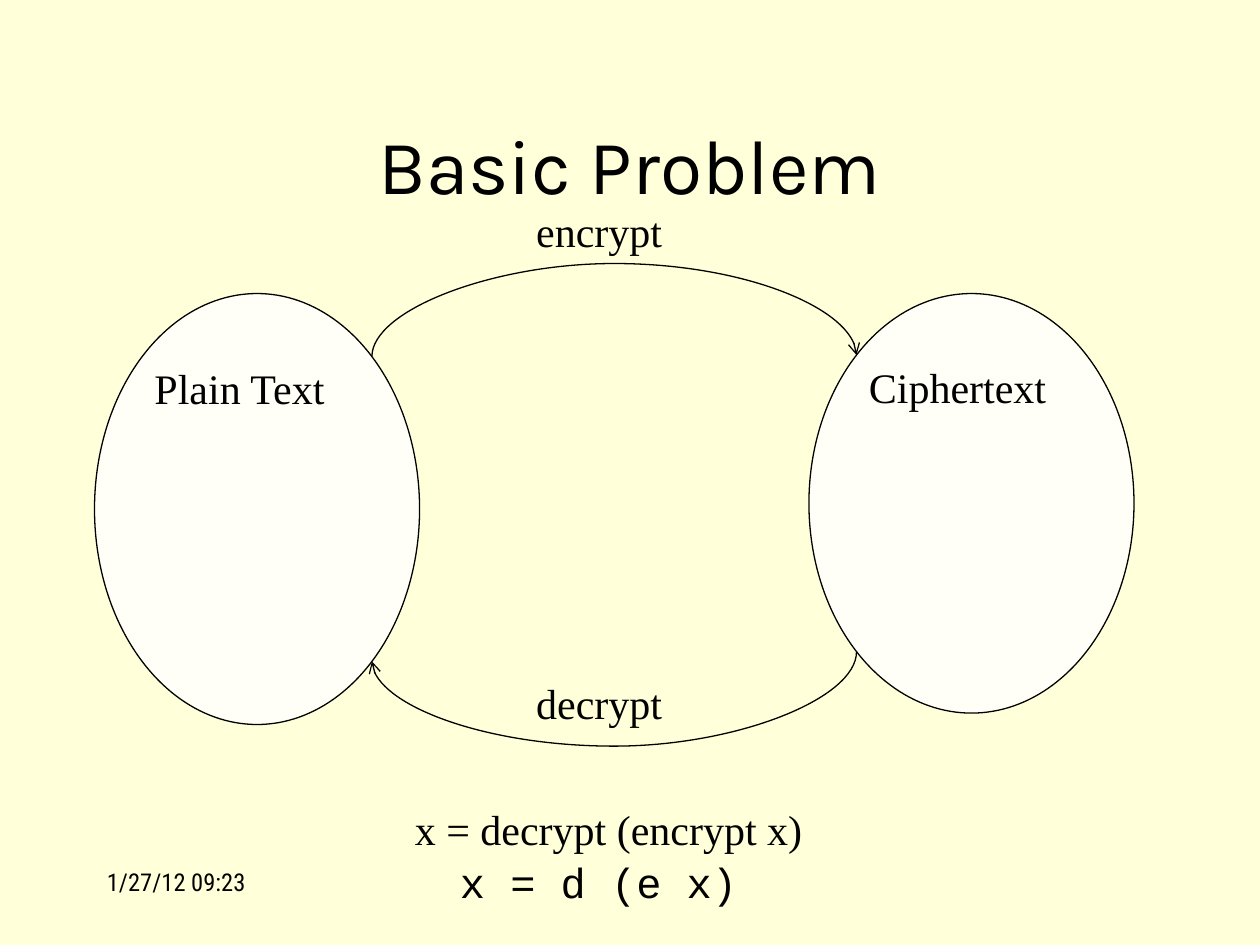
from lxml.etree import SubElement
from pptx import Presentation
from pptx.dml.color import RGBColor
from pptx.enum.shapes import MSO_CONNECTOR, MSO_SHAPE
from pptx.enum.text import MSO_ANCHOR, PP_ALIGN
from pptx.oxml.ns import qn
from pptx.util import Inches, Pt

COLORS = {"background": "FFFFD9", "oval": "FFFFF7", "ink": "000000"}
SERIF = "Times New Roman"
# Connection sites of an ellipse, counted anticlockwise from the top
TOP_LEFT, BOTTOM_LEFT, BOTTOM_RIGHT, TOP_RIGHT = 1, 3, 5, 7


def color(name):
    return RGBColor.from_string(COLORS[name])


def write(frame, text, size, font, align=PP_ALIGN.LEFT):
    frame.word_wrap = True
    line = frame.paragraphs[0]
    line.text = text
    line.alignment = align
    line.font.size = Pt(size)
    line.font.name = font
    line.font.color.rgb = color("ink")


def add_label(slide, box, text, size=24, font=SERIF, align=PP_ALIGN.CENTER,
              anchor=MSO_ANCHOR.TOP):
    frame = slide.shapes.add_textbox(*map(Inches, box)).text_frame
    frame.vertical_anchor = anchor
    write(frame, text, size, font, align)


def add_oval(slide, box, text):
    oval = slide.shapes.add_shape(MSO_SHAPE.OVAL, *map(Inches, box))
    oval.shadow.inherit = False
    oval.fill.solid()
    oval.fill.fore_color.rgb = color("oval")
    oval.line.color.rgb = color("ink")
    oval.line.width = Pt(0.75)
    oval.text_frame.vertical_anchor = MSO_ANCHOR.TOP
    write(oval.text_frame, text, 24, SERIF)
    return oval


def site_point(oval, site):
    """Position of a diagonal connection site on an ellipse."""
    across = 1 if site in (TOP_RIGHT, BOTTOM_RIGHT) else -1
    down = 1 if site in (BOTTOM_LEFT, BOTTOM_RIGHT) else -1
    reach = 0.5 ** 0.5 / 2
    return (oval.left + oval.width * (0.5 + across * reach),
            oval.top + oval.height * (0.5 + down * reach))


def add_arc(slide, source, source_site, target, target_site, upward):
    """Curved arrow between two ovals, bulging 0.75 in above or below them."""
    x1, y1 = site_point(source, source_site)
    x2, y2 = site_point(target, target_site)
    # The curve is a standing connector turned by 90 degrees
    width, height = abs(y2 - y1), abs(x2 - x1)
    left, top = (x1 + x2 - width) / 2, (y1 + y2 - height) / 2
    arc = slide.shapes.add_connector(
        MSO_CONNECTOR.CURVE,
        *map(int, (left, top, left + width, top + height)))
    arc.line.color.rgb = color("ink")
    arc.line.width = Pt(0.75)

    properties = arc._element.spPr
    xfrm = properties.find(qn("a:xfrm"))
    xfrm.set("rot", str(90 * 60000))
    if upward:
        xfrm.set("flipH", "1")
        xfrm.set("flipV", "1")
    bulge = round(Inches(0.75) / width * 100000)
    guides = properties.find(qn("a:prstGeom")).find(qn("a:avLst"))
    SubElement(guides, qn("a:gd"), name="adj1", fmla=f"val {bulge}")
    SubElement(properties.find(qn("a:ln")), qn("a:tailEnd"), type="arrow")
    SubElement(properties, qn("a:effectLst"))

    # Join the ends to the ovals' diagonal sites
    joints = arc._element.find(".//" + qn("p:cNvCxnSpPr"))
    for tag, oval, site in (("a:stCxn", source, source_site),
                            ("a:endCxn", target, target_site)):
        SubElement(joints, qn(tag), id=str(oval.shape_id), idx=str(site))


def add_cipher_cycle(slide, left, top):
    plain = add_oval(slide, (left, top, 2.58, 3.42), "Plain Text")
    cipher = add_oval(slide, (left + 5.67, top, 2.58, 3.33), "Ciphertext")
    add_arc(slide, plain, TOP_RIGHT, cipher, TOP_LEFT, upward=True)
    add_arc(slide, cipher, BOTTOM_LEFT, plain, BOTTOM_RIGHT, upward=False)
    add_label(slide, (left + 2.92, top - 0.75, 2.17, 0.5), "encrypt")
    add_label(slide, (left + 2.92, top + 3, 2.17, 0.5), "decrypt")


def add_equations(slide, left, top):
    add_label(slide, (left + 0.08, top, 6.5, 0.5), "x = decrypt (encrypt x)")
    add_label(slide, (left, top + 0.42, 6.5, 0.5), "x = d (e x)",
              font="Courier New")


def main():
    deck = Presentation()
    deck.slide_width, deck.slide_height = Inches(10), Inches(7.5)
    slide = deck.slides.add_slide(deck.slide_layouts[6])
    slide.background.fill.solid()
    slide.background.fill.fore_color.rgb = color("background")

    # Title and date
    add_label(slide, (0.75, 0.67, 8.5, 1.25), "Basic Problem", 44, "Karla",
              anchor=MSO_ANCHOR.MIDDLE)
    add_label(slide, (0.75, 6.83, 2.08, 0.5), "1/27/12 09:23", 14,
              "Roboto Condensed", PP_ALIGN.LEFT)

    # Diagram and formulas
    add_cipher_cycle(slide, 0.75, 2.33)
    add_equations(slide, 1.5, 6.33)
    deck.save("out.pptx")


if __name__ == "__main__":
    main()
